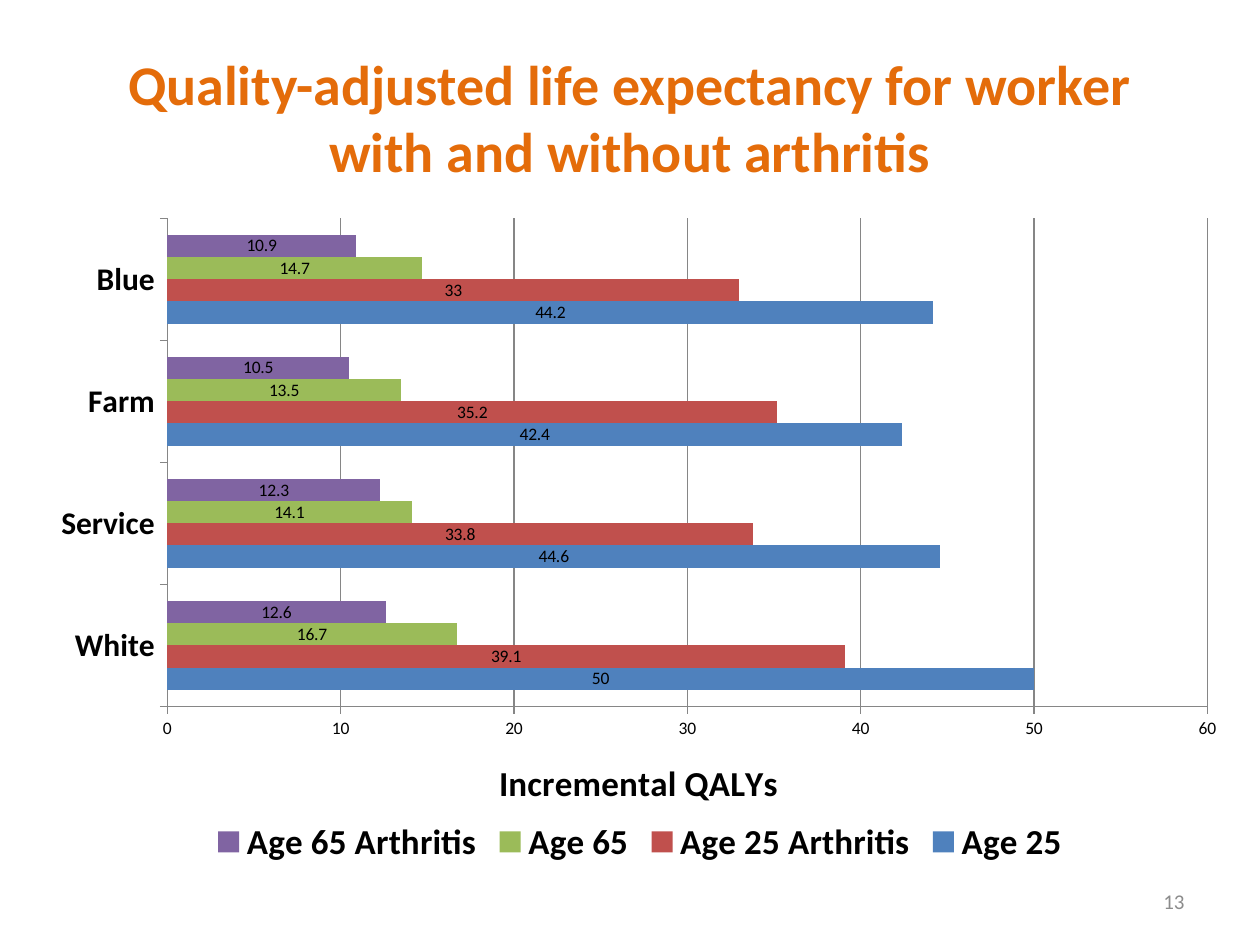
from lxml import etree
from pptx import Presentation
from pptx.chart.data import CategoryChartData
from pptx.dml.color import RGBColor
from pptx.enum.chart import XL_CHART_TYPE, XL_LABEL_POSITION, XL_LEGEND_POSITION, XL_TICK_MARK
from pptx.enum.text import MSO_ANCHOR, PP_ALIGN
from pptx.oxml import parse_xml
from pptx.oxml.ns import nsdecls, qn
from pptx.util import Inches, Pt

FONT = "Calibri"
JOBS = ["White", "Service", "Farm", "Blue"]
AGE_GROUPS = [
    ("Age 25", "4F81BD", [50, 44.6, 42.4, 44.2]),
    ("Age 25 Arthritis", "C0504D", [39.1, 33.8, 35.2, 33]),
    ("Age 65", "9BBB59", [16.7, 14.1, 13.5, 14.7]),
    ("Age 65 Arthritis", "8064A2", [12.6, 12.3, 10.5, 10.9]),
]


def rgb(color):
    return RGBColor.from_string(color)


def style_font(font, size, color="000000", bold=False):
    font.name = FONT
    font.size = Pt(size)
    font.bold = bold
    font.color.rgb = rgb(color)


def write_text(shape, text, alignment, size, color, bold=False):
    frame = shape.text_frame
    frame.word_wrap = True
    frame.vertical_anchor = MSO_ANCHOR.MIDDLE
    frame.text = text
    paragraph = frame.paragraphs[0]
    paragraph.alignment = alignment
    style_font(paragraph.runs[0].font, size, color, bold)


def add_heading(slide, text):
    heading = slide.shapes.title
    heading.left, heading.top = Inches(0.5), Inches(0.3)
    heading.width, heading.height = Inches(9), Inches(1.25)
    write_text(heading, text, PP_ALIGN.CENTER, 32, "E46C0A", True)


def add_page_number(slide, number):
    page_number = slide.shapes.add_textbox(Inches(7.17), Inches(6.95), Inches(2.33), Inches(0.4))
    write_text(page_number, number, PP_ALIGN.RIGHT, 12, "8C8C8C")


def place_plot_area(chart, **fractions):
    plot_area = chart.element.find(".//" + qn("c:plotArea"))
    for old_layout in plot_area.findall(qn("c:layout")):
        plot_area.remove(old_layout)
    layout = parse_xml(
        f'<c:layout {nsdecls("c")}><c:manualLayout><c:layoutTarget val="inner"/>'
        '<c:xMode val="edge"/><c:yMode val="edge"/></c:manualLayout></c:layout>'
    )
    for side, fraction in fractions.items():
        etree.SubElement(layout[0], qn(f"c:{side}")).set("val", str(fraction))
    plot_area.insert(0, layout)


def style_axis(axis, size, bold=False):
    axis.major_tick_mark = XL_TICK_MARK.OUTSIDE
    axis.minor_tick_mark = XL_TICK_MARK.NONE
    axis.format.line.color.rgb = rgb("868686")
    style_font(axis.tick_labels.font, size, bold=bold)


def style_value_axis(axis, title):
    style_axis(axis, 10)
    axis.minimum_scale, axis.maximum_scale, axis.major_unit = 0, 60, 10
    axis.has_major_gridlines = True
    axis.major_gridlines.format.line.color.rgb = rgb("868686")
    axis.axis_title.text_frame.text = title
    style_font(axis.axis_title.text_frame.paragraphs[0].runs[0].font, 20, bold=True)


def style_bars(plot):
    plot.gap_width = 150
    plot.overlap = 0
    plot.vary_by_categories = False
    plot.has_data_labels = True
    labels = plot.data_labels
    labels.show_value = True
    labels.position = XL_LABEL_POSITION.CENTER
    style_font(labels.font, 10)
    for series, (_, color, _) in zip(plot.series, AGE_GROUPS):
        series.format.fill.solid()
        series.format.fill.fore_color.rgb = rgb(color)


def add_qaly_chart(slide):
    data = CategoryChartData()
    data.categories = JOBS
    for age_group, _, qalys in AGE_GROUPS:
        data.add_series(age_group, qalys)
    chart = slide.shapes.add_chart(
        XL_CHART_TYPE.BAR_CLUSTERED,
        Inches(0.33), Inches(1.55), Inches(9.5), Inches(5.36), data,
    ).chart
    chart.has_title = False
    style_font(chart.font, 10)
    style_bars(chart.plots[0])
    style_axis(chart.category_axis, 18, True)
    style_value_axis(chart.value_axis, "Incremental QALYs")
    chart.has_legend = True
    chart.legend.position = XL_LEGEND_POSITION.BOTTOM
    chart.legend.include_in_layout = False
    style_font(chart.legend.font, 20, bold=True)
    place_plot_area(chart, x=0.105, y=0.034, w=0.869, h=0.723)


def main():
    presentation = Presentation()
    presentation.slide_width = Inches(10)
    presentation.slide_height = Inches(7.5)
    slide = presentation.slides.add_slide(presentation.slide_layouts[5])
    add_heading(slide, "Quality-adjusted life expectancy for worker with and without arthritis")
    add_qaly_chart(slide)
    add_page_number(slide, "13")
    presentation.save("out.pptx")


if __name__ == "__main__":
    main()
